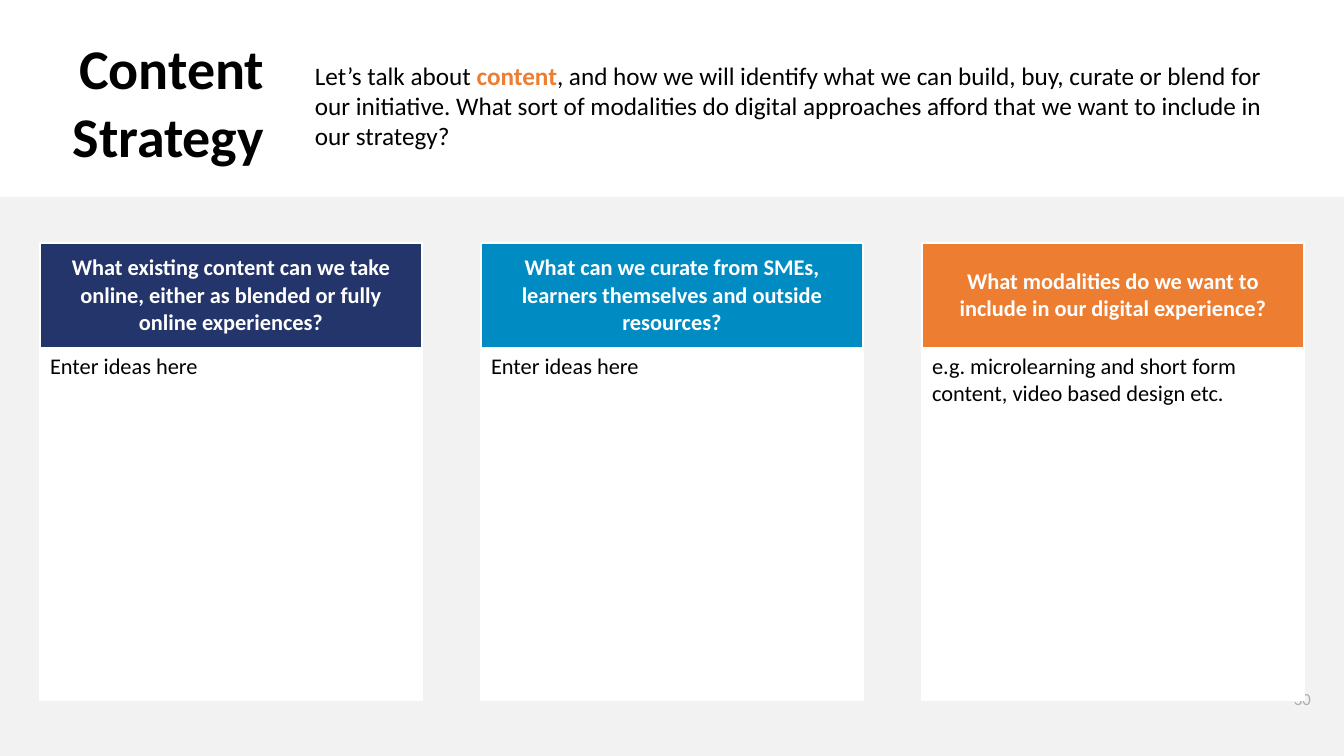
from pptx import Presentation
from pptx.dml.color import RGBColor
from pptx.enum.shapes import MSO_SHAPE
from pptx.enum.text import MSO_ANCHOR, PP_ALIGN
from pptx.util import Pt

EMU_PER_PX = 914400 / 100.8


def px(*lengths):
    return [round(length * EMU_PER_PX) for length in lengths]


def write(text_frame, pieces, size, bold=False, align=PP_ALIGN.LEFT):
    text_frame.word_wrap = True
    paragraph = text_frame.paragraphs[0]
    paragraph.alignment = align
    for text, color, emphasis in pieces:
        run = paragraph.add_run()
        run.text = text
        run.font.name = "Calibri"
        run.font.size = Pt(size)
        run.font.bold = bold or emphasis
        run.font.color.rgb = RGBColor.from_string(color)


presentation = Presentation()
presentation.slide_width, presentation.slide_height = px(1344, 756)
slide = presentation.slides.add_slide(presentation.slide_layouts[6])
shapes = slide.shapes

background = shapes.add_shape(MSO_SHAPE.RECTANGLE, *px(0, 197, 1344, 559))
background.shadow.inherit = False
background.fill.solid()
background.fill.fore_color.rgb = RGBColor.from_string("F2F2F2")
background.line.fill.background()

page_number = shapes.add_textbox(*px(1284, 679, 60, 40))
page_number.text_frame.vertical_anchor = MSO_ANCHOR.MIDDLE
write(page_number.text_frame, [("30", "AFABAB", False)], 12)

title = shapes.add_textbox(*px(-24, 29, 298, 146))
write(title.text_frame, [("Content Strategy", "000000", False)], 40, True, PP_ALIGN.RIGHT)

introduction = shapes.add_textbox(*px(305, 55, 999, 102))
write(introduction.text_frame, [
    ("Let’s talk about ", "000000", False),
    ("content", "EC7D31", True),
    (", and how we will identify what we can build, buy, curate or blend for our initiative. "
     "What sort of modalities do digital approaches afford that we want to include in our strategy?",
     "000000", False),
], 18)

columns = [
    ("What existing content can we take online, either as blended or fully online experiences?",
     "Enter ideas here", "23356A"),
    ("What can we curate from SMEs, learners themselves and outside resources?",
     "Enter ideas here", "008BC3"),
    ("What modalities do we want to include in our digital experience?",
     "e.g. microlearning and short form content, video based design etc.", "EC7D31"),
]
for index, (question, ideas, header_color) in enumerate(columns):
    table = shapes.add_table(2, 1, *px(40 + 441 * index, 243, 382, 457)).table
    table.horz_banding = False
    table.rows[0].height, table.rows[1].height = px(105, 352)
    header, body = table.cell(0, 0), table.cell(1, 0)
    for cell, color in ((header, header_color), (body, "FFFFFF")):
        cell.fill.solid()
        cell.fill.fore_color.rgb = RGBColor.from_string(color)
    header.vertical_anchor = MSO_ANCHOR.MIDDLE
    write(header.text_frame, [(question, "FFFFFF", False)], 16, True, PP_ALIGN.CENTER)
    write(body.text_frame, [(ideas, "000000", False)], 16)

presentation.save("out.pptx")
